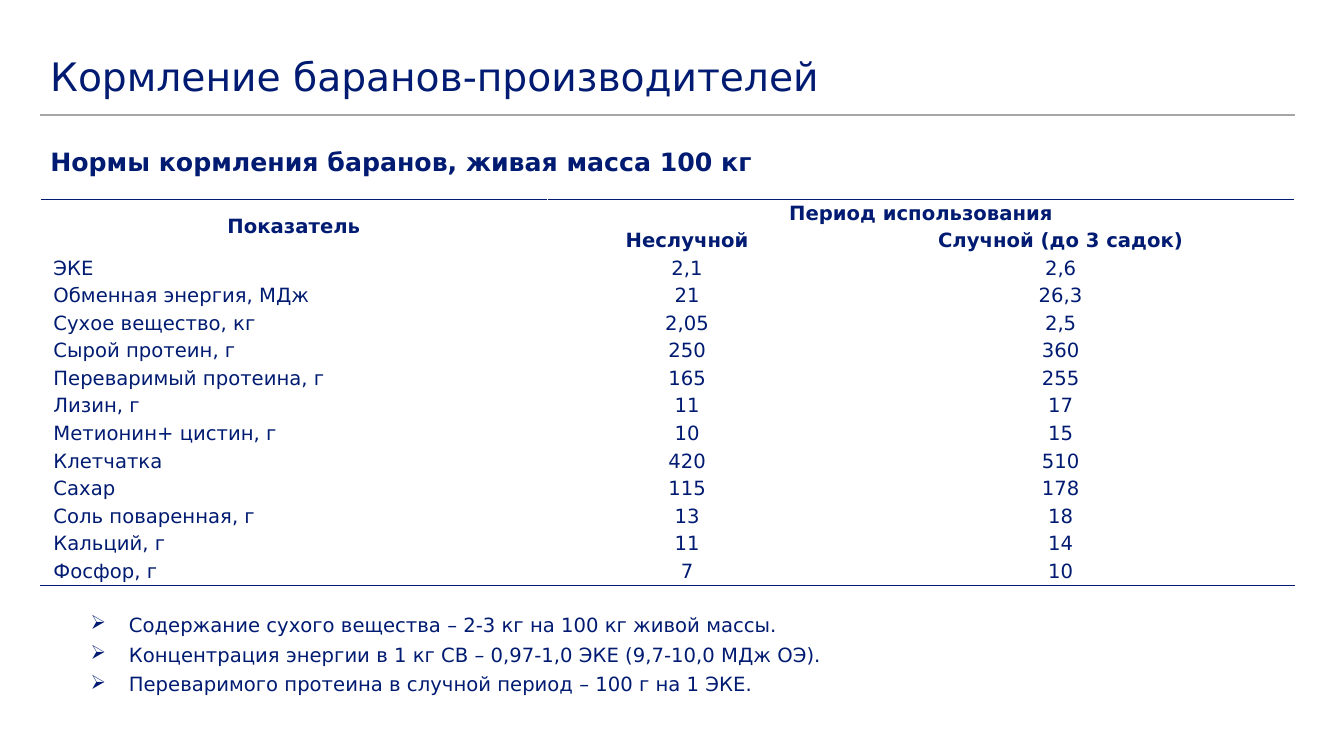
from lxml.etree import SubElement
from pptx import Presentation
from pptx.dml.color import RGBColor
from pptx.enum.shapes import MSO_CONNECTOR, MSO_SHAPE
from pptx.enum.text import MSO_ANCHOR, PP_ALIGN
from pptx.oxml.ns import qn
from pptx.util import Inches, Pt

COLORS = {"navy": "001B71", "rule": "A6A6A6", "white": "FFFFFF"}
FONT = "DejaVu Sans"
LEFT, WIDTH = Inches(0.4), Inches(12.44)

HEADINGS = {
    (0, 0): "Показатель",
    (0, 1): "Период использования",
    (1, 1): "Неслучной",
    (1, 2): "Случной (до 3 садок)",
}
NORMS = [
    ("ЭКЕ", "2,1", "2,6"),
    ("Обменная энергия, МДж", "21", "26,3"),
    ("Сухое вещество, кг", "2,05", "2,5"),
    ("Сырой протеин, г", "250", "360"),
    ("Переваримый протеина, г", "165", "255"),
    ("Лизин, г", "11", "17"),
    ("Метионин+ цистин, г", "10", "15"),
    ("Клетчатка", "420", "510"),
    ("Сахар", "115", "178"),
    ("Соль поваренная, г", "13", "18"),
    ("Кальций, г", "11", "14"),
    ("Фосфор, г", "7", "10"),
]
NOTES = [
    "Содержание сухого вещества – 2-3 кг на 100 кг живой массы.",
    "Концентрация энергии в 1 кг СВ – 0,97-1,0 ЭКЕ (9,7-10,0 МДж ОЭ).",
    "Переваримого протеина в случной период – 100 г на 1 ЭКЕ.",
]


def add_span(para, text, size, bold=False):
    span = para.add_run()
    span.text = text
    span.font.name = FONT
    span.font.size = Pt(size)
    span.font.bold = bold
    span.font.color.rgb = RGBColor.from_string(COLORS["navy"])


def add_border(cell, side):
    """Draw one edge of a cell; side is T or B."""
    line = SubElement(cell._tc.get_or_add_tcPr(), qn(f"a:ln{side}"), w=str(Pt(1)))
    fill = SubElement(line, qn("a:solidFill"))
    SubElement(fill, qn("a:srgbClr"), val=COLORS["navy"])


deck = Presentation()
deck.slide_width, deck.slide_height = Inches(13.33), Inches(7.5)
page = deck.slides.add_slide(deck.slide_layouts[6])

# Title, rule and subtitle
rule_top = Inches(1.14)
rule = page.shapes.add_connector(
    MSO_CONNECTOR.STRAIGHT, LEFT, rule_top, LEFT + WIDTH, rule_top)
rule.line.color.rgb = RGBColor.from_string(COLORS["rule"])
rule.line.width = Pt(1)
SubElement(rule._element.spPr, qn("a:effectLst"))

for text, top, width, height, size, bold in [
    ("Кормление баранов-производителей", 0.45, 12.44, 0.6, 28, False),
    ("Нормы кормления баранов, живая масса 100 кг", 1.4, 9.01, 0.4, 18, True),
]:
    box = page.shapes.add_textbox(LEFT, Inches(top), Inches(width), Inches(height))
    box.text_frame.word_wrap = True
    box.text_frame.vertical_anchor = MSO_ANCHOR.MIDDLE
    add_span(box.text_frame.paragraphs[0], text, size, bold)

# Table of feeding norms
row_count = 2 + len(NORMS)
table = page.shapes.add_table(
    row_count, 3, LEFT, Inches(1.98), WIDTH, Inches(3.81)).table
table.first_row = table.horz_banding = False
for column, width in zip(table.columns, (5.03, 2.77, 4.64)):
    column.width = Inches(width)
table.cell(0, 0).merge(table.cell(1, 0))
table.cell(0, 1).merge(table.cell(0, 2))

texts = dict(HEADINGS)
for row, values in enumerate(NORMS, start=2):
    for col, value in enumerate(values):
        texts[row, col] = value

for row in range(row_count):
    for col in range(3):
        cell = table.cell(row, col)
        cell.margin_left = cell.margin_right = Inches(0.01)
        cell.margin_top = cell.margin_bottom = Inches(0.02)
        cell.vertical_anchor = MSO_ANCHOR.MIDDLE
        if row == 0:
            add_border(cell, "T")
        if row == row_count - 1 or (row, col) in [(0, 0), (1, 0), (0, 1), (0, 2)]:
            add_border(cell, "B")
        cell.fill.background()
        if (row, col) not in texts:
            continue
        para = cell.text_frame.paragraphs[0]
        if row > 1 and col == 0:
            para._p.get_or_add_pPr().set("marL", str(Inches(0.12)))
        else:
            para.alignment = PP_ALIGN.CENTER
        add_span(para, texts[row, col], 14, bold=row < 2)

# Notes
notes = page.shapes.add_shape(
    MSO_SHAPE.RECTANGLE, Inches(0.8), Inches(6.06), Inches(11.72), Inches(0.91))
notes.shadow.inherit = False
notes.fill.solid()
notes.fill.fore_color.rgb = RGBColor.from_string(COLORS["white"])
notes.line.fill.background()
frame = notes.text_frame
frame.word_wrap = True
frame.vertical_anchor = MSO_ANCHOR.TOP
for index, note in enumerate(NOTES):
    para = frame.add_paragraph() if index else frame.paragraphs[0]
    para.alignment = PP_ALIGN.LEFT
    para.line_spacing = 0.9
    para.space_after = Pt(6)
    properties = para._p.get_or_add_pPr()
    properties.set("marL", str(Inches(0.38)))
    properties.set("indent", str(-Inches(0.38)))
    SubElement(properties, qn("a:buChar"), char="➢")
    add_span(para, note, 14)

deck.save("out.pptx")
